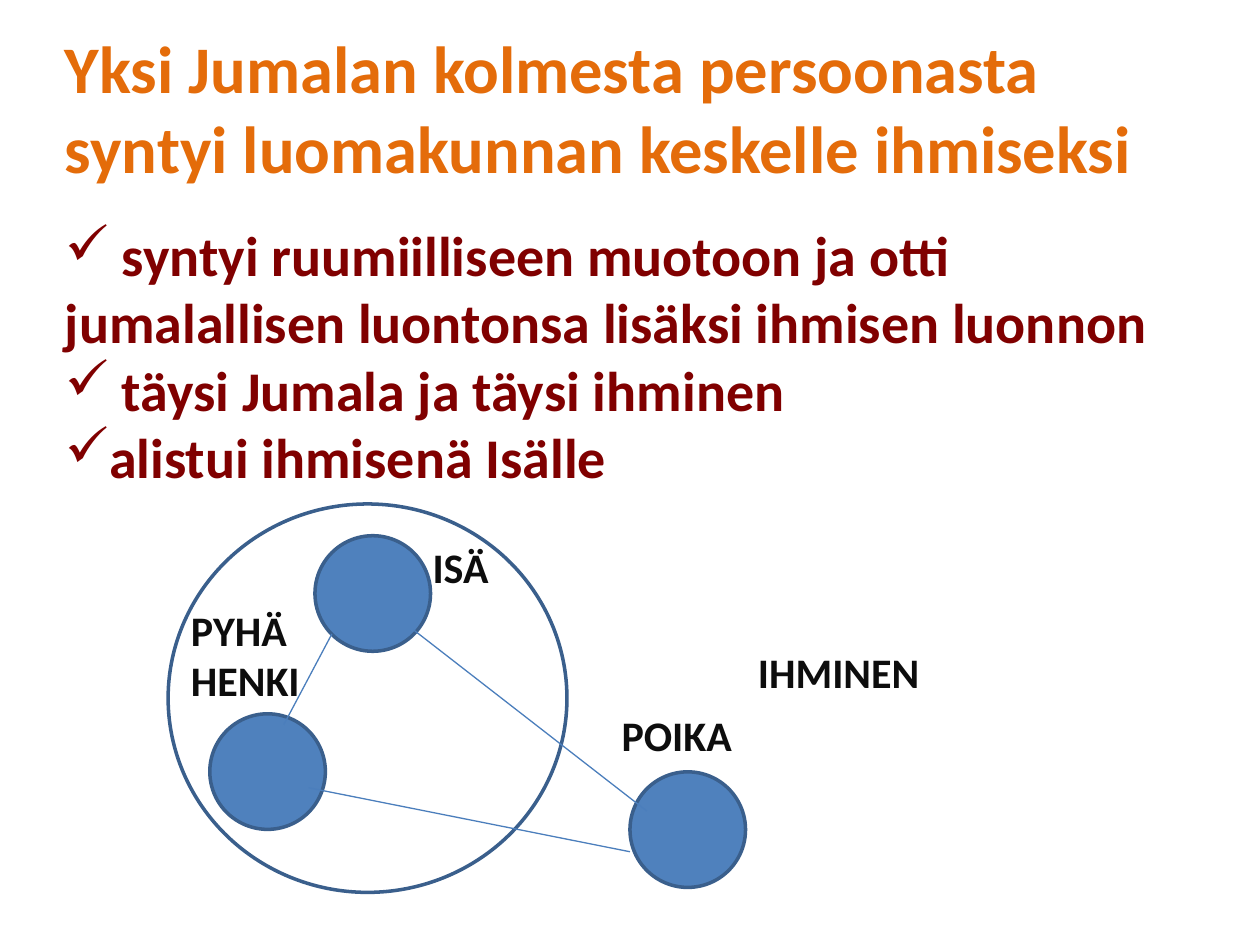
from dataclasses import dataclass

from lxml.etree import SubElement
from pptx import Presentation
from pptx.dml.color import RGBColor
from pptx.enum.shapes import MSO_CONNECTOR as Connector, MSO_SHAPE as Preset
from pptx.oxml.ns import qn
from pptx.util import Cm, Pt


@dataclass(frozen=True)
class Theme:
    font: str = "Calibri"
    title_color: str = "E46C0A"
    body_color: str = "800000"
    label_color: str = "0D0D0D"
    fill: str = "4F81BD"
    outline: str = "3A5F8C"
    link: str = "4B7EBC"
    title_size: float = 38
    body_size: float = 32
    label_size: float = 24
    outline_width: float = 2
    link_width: float = 0.75


@dataclass(frozen=True)
class Line:
    text: str
    size: float
    color: str
    bullet: bool = False
    space_before: float = 0


@dataclass(frozen=True)
class TextBox:
    left: float
    top: float
    width: float
    height: float
    lines: tuple[Line, ...]
    wrap: bool = True


@dataclass(frozen=True)
class Circle:
    left: float
    top: float
    width: float
    height: float
    filled: bool = True


@dataclass(frozen=True)
class Link:
    start: tuple[float, float]
    end: tuple[float, float]


THEME = Theme()
PERSON_SIZE = 2.33


def title(text: str) -> Line:
    return Line(text, THEME.title_size, THEME.title_color)


def body(text: str, bullet: bool = True, space_before: float = 0) -> Line:
    return Line(text, THEME.body_size, THEME.body_color, bullet, space_before)


def label(text: str, left: float, top: float, width: float = 2.75,
          height: float = 1.28, wrap: bool = True) -> TextBox:
    line = Line(text, THEME.label_size, THEME.label_color)
    return TextBox(left, top, width, height, (line,), wrap)


def person(left: float, top: float) -> Circle:
    return Circle(left, top, PERSON_SIZE, PERSON_SIZE)


HEADING = TextBox(1.06, 0.42, 24.34, 9.65, (
    title("Yksi Jumalan kolmesta persoonasta"),
    title("syntyi luomakunnan keskelle ihmiseksi"),
    body(" syntyi ruumiilliseen muotoon ja otti", space_before=19.5),
    body("jumalallisen luontonsa lisäksi ihmisen luonnon", bullet=False),
    body(" täysi Jumala ja täysi ihminen"),
    body("alistui ihmisenä Isälle"),
))
CIRCLES = (
    Circle(3.39, 10.16, 8.04, 7.83, filled=False),
    person(6.35, 10.8),
    person(4.23, 14.39),
    person(12.7, 15.56),
)
LINKS = (
    Link((6.69, 12.78), (5.72, 14.61)),
    Link((8.34, 12.7), (13.04, 16.35)),
    Link((6.22, 15.88), (12.7, 17.17)),
)
LABELS = (
    label("IHMINEN", 15.03, 12.91, width=3.79, wrap=False),
    label("PYHÄ HENKI", 3.6, 12.06, height=2.31),
    label("ISÄ", 8.47, 10.8),
    label("POIKA", 12.28, 14.18),
)


def add_text(slide, box: TextBox) -> None:
    shape = slide.shapes.add_textbox(
        Cm(box.left), Cm(box.top), Cm(box.width), Cm(box.height))
    frame = shape.text_frame
    frame.word_wrap = box.wrap
    for index, line in enumerate(box.lines):
        paragraph = frame.add_paragraph() if index else frame.paragraphs[0]
        if line.space_before:
            paragraph.space_before = Pt(line.space_before)
        if line.bullet:
            properties = paragraph._p.get_or_add_pPr()
            SubElement(properties, qn("a:buChar")).set("char", "✓")
        run = paragraph.add_run()
        run.text = line.text
        run.font.name = THEME.font
        run.font.size = Pt(line.size)
        run.font.bold = True
        run.font.color.rgb = RGBColor.from_string(line.color)


def add_circle(slide, circle: Circle) -> None:
    shape = slide.shapes.add_shape(
        Preset.OVAL, Cm(circle.left), Cm(circle.top),
        Cm(circle.width), Cm(circle.height))
    shape.shadow.inherit = False
    if circle.filled:
        shape.fill.solid()
        shape.fill.fore_color.rgb = RGBColor.from_string(THEME.fill)
    else:
        shape.fill.background()
    shape.line.color.rgb = RGBColor.from_string(THEME.outline)
    shape.line.width = Pt(THEME.outline_width)


def add_link(slide, link: Link) -> None:
    connector = slide.shapes.add_connector(
        Connector.STRAIGHT, *map(Cm, link.start + link.end))
    connector.line.color.rgb = RGBColor.from_string(THEME.link)
    connector.line.width = Pt(THEME.link_width)
    SubElement(connector._element.spPr, qn("a:effectLst"))


def main() -> None:
    presentation = Presentation()
    presentation.slide_width, presentation.slide_height = Cm(25.4), Cm(19.05)
    slide = presentation.slides.add_slide(presentation.slide_layouts[6])

    # Heading and bullet points
    add_text(slide, HEADING)

    # Trinity diagram: outer ring, persons and the links between them
    for circle in CIRCLES:
        add_circle(slide, circle)
    for link in LINKS:
        add_link(slide, link)

    # Names in the diagram
    for name in LABELS:
        add_text(slide, name)

    presentation.save("out.pptx")


if __name__ == "__main__":
    main()
